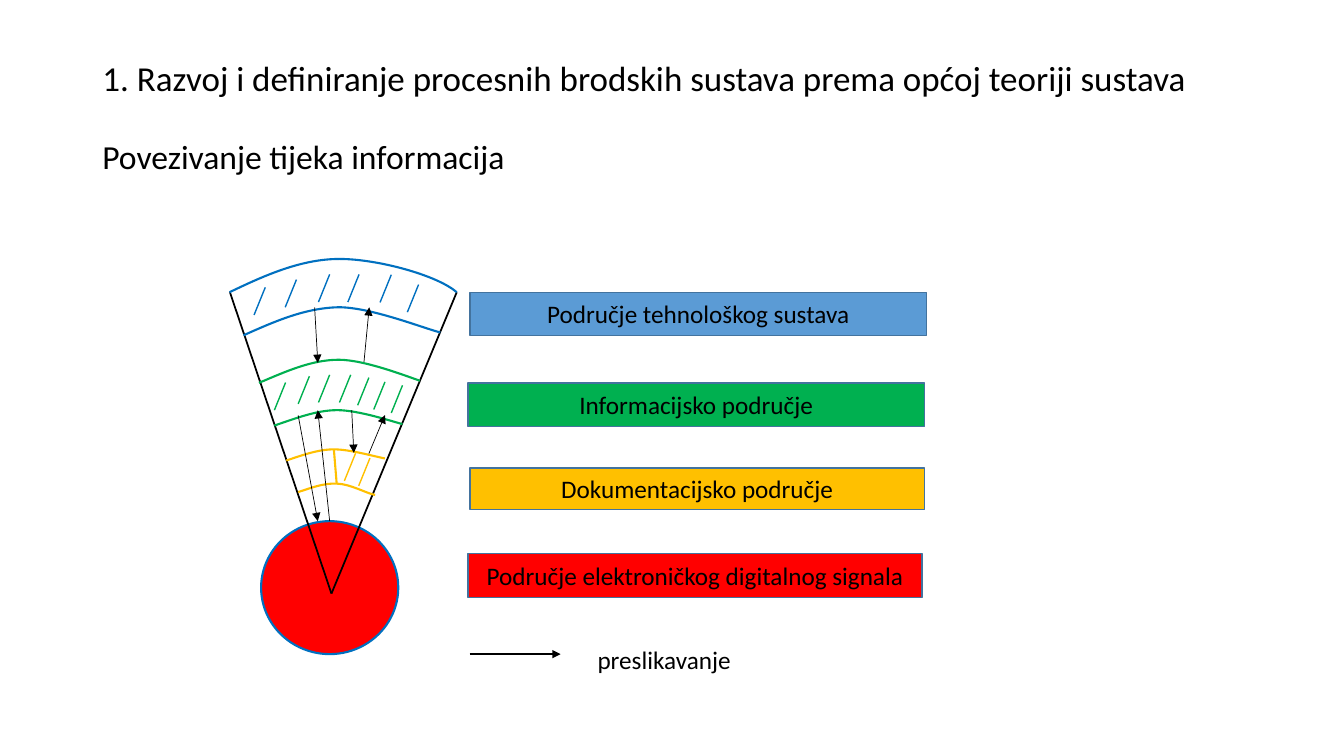
from pptx import Presentation
from pptx import util as u
from pptx.dml import color as c
from pptx.enum import shapes, text
from pptx.oxml import ns
from lxml import etree

BLACK, WHITE, RED = "000000", "FFFFFF", "FF0000"
BLUE, GREEN, YELLOW = "0070C0", "00B050", "FFC000"


def paint(target, value):
    if hasattr(target, "solid"):
        target.solid()
        target = target.fore_color
    target.rgb = c.RGBColor.from_string(value)


def add_line(start, end, colour, width, arrow=False):
    line = slide.shapes.add_connector(
        shapes.MSO_CONNECTOR.STRAIGHT, *(u.Pt(value) for value in (*start, *end))
    )
    paint(line.line.color, colour)
    line.line.width = u.Pt(width)
    outline = line._element.spPr.find(ns.qn("a:ln"))
    if arrow:
        etree.SubElement(outline, ns.qn("a:tailEnd")).set("type", "triangle")
    etree.SubElement(line._element.spPr, ns.qn("a:effectLst"))
    return line


presentation = Presentation()
presentation.slide_width = u.Pt(960)
presentation.slide_height = u.Pt(540)
slide = presentation.slides.add_slide(presentation.slide_layouts[5])

title = slide.shapes.title
title.left, title.top, title.width, title.height = (
    u.Pt(value) for value in (66, 28.75, 828, 57)
)
subtitle = slide.shapes.add_textbox(u.Pt(66), u.Pt(97), u.Pt(828), u.Pt(389.5))
headings = [
    (title, "1. Razvoj i definiranje procesnih brodskih sustava prema općoj teoriji sustava",
     25, text.MSO_ANCHOR.MIDDLE),
    (subtitle, "Povezivanje tijeka informacija", 24, text.MSO_ANCHOR.TOP),
]
for shape, wording, size, anchor in headings:
    frame = shape.text_frame
    frame.text = wording
    frame.word_wrap = True
    frame.auto_size = text.MSO_AUTO_SIZE.NONE
    frame.vertical_anchor = anchor
    paragraph = frame.paragraphs[0]
    paragraph.alignment = text.PP_ALIGN.LEFT
    paragraph.line_spacing = 0.9
    font = paragraph.runs[0].font
    font.name, font.size = "Calibri", u.Pt(size)
    paint(font.color, BLACK)

signal_circle = slide.shapes.add_shape(
    shapes.MSO_SHAPE.OVAL, u.Pt(186.5), u.Pt(372.25), u.Pt(98), u.Pt(95)
)
signal_circle.shadow.inherit = False
paint(signal_circle.fill, RED)
paint(signal_circle.line.color, BLUE)
signal_circle.line.width = u.Pt(1.5)

for corner in [(164.25, 208.75), (326.25, 208.75)]:
    add_line((236.75, 424), corner, BLACK, 1.25)

arcs = [
    (YELLOW, [(213, 351.5), (222.5, 348.5), (231, 345), (240.5, 345.5),
              (250, 345.5), (263, 353), (268, 353.5)]),
    (YELLOW, [(204.5, 329), (215, 325.5), (227, 321), (238.5, 321),
              (250, 321), (267, 326), (275, 327.5)]),
    (GREEN, [(196, 304), (211, 299), (226, 293), (241, 293),
             (256, 293), (280, 301), (287.5, 303)]),
    (GREEN, [(185, 273.5), (204, 265.5), (222.5, 257), (242, 257),
             (260.5, 257), (291, 269), (300, 272)]),
    (BLUE, [(174, 239.5), (196.5, 229.5), (218, 220), (242, 219.5),
            (265, 219.5), (302.5, 234.5), (314.5, 237.5)]),
    (BLUE, [(164, 208.75), (189.5, 196.5), (215.5, 185), (242.5, 185),
            (269.5, 185), (312, 196.5), (326.25, 208.75)]),
]
for colour, controls in arcs:
    points = [(u.Pt(x), u.Pt(y)) for x, y in controls]
    builder = slide.shapes.build_freeform(*points[0])
    builder.add_line_segments(points[1:], close=False)
    arc = builder.convert_to_shape()
    segments = list(arc._element.iter(ns.qn("a:lnTo")))
    outline = segments[0].getparent()
    for first in (0, 3):
        bezier = etree.SubElement(outline, ns.qn("a:cubicBezTo"))
        for segment in segments[first:first + 3]:
            bezier.append(segment[0])
            outline.remove(segment)
    arc.shadow.inherit = False
    arc.fill.background()
    paint(arc.line.color, colour)
    arc.line.width = u.Pt(1.5)
paint(arc.fill, WHITE)

mappings = [
    ((224.75, 219.5), (227, 259.25)),
    ((260, 258.5), (263.75, 219.5)),
    ((251.25, 293), (252.75, 323.5)),
    ((263.5, 324), (275, 296.5)),
    ((213, 296.75), (227, 372.25)),
]
for start, end in mappings:
    add_line(start, end, BLACK, 0.5, arrow=True)
signal_arrow = add_line((235.5, 372.25), (227, 293), BLACK, 0.5, arrow=True)
signal_arrow.begin_connect(signal_circle, 0)
add_line((240.5, 345.5), (238.5, 321), YELLOW, 1.5)

areas = [
    ("Područje tehnološkog sustava", "5B9BD5", 335.75, 208.75, 326, 31),
    ("Informacijsko područje", GREEN, 334.25, 273.5, 326, 31),
    ("Dokumentacijsko područje", YELLOW, 335.75, 334.25, 324.5, 29.5),
    ("Područje elektroničkog digitalnog signala", RED, 334.25, 395.5, 324.5, 31.5),
    ("preslikavanje", None, 416, 454.5, 116.75, 32.5),
]
for wording, colour, *place in areas:
    box = [u.Pt(value) for value in place]
    if colour:
        shape = slide.shapes.add_shape(shapes.MSO_SHAPE.RECTANGLE, *box)
        shape.shadow.inherit = False
        paint(shape.fill, colour)
        paint(shape.line.color, "43739E")
        shape.line.width = u.Pt(1)
    else:
        shape = slide.shapes.add_textbox(*box)
    frame = shape.text_frame
    frame.text = wording
    frame.word_wrap = True
    frame.vertical_anchor = text.MSO_ANCHOR.MIDDLE
    paragraph = frame.paragraphs[0]
    paragraph.alignment = text.PP_ALIGN.CENTER
    font = paragraph.runs[0].font
    font.name, font.size = "Calibri", u.Pt(18)
    paint(font.color, BLACK)

add_line((335.5, 467.25), (400.5, 467.25), BLACK, 1.5, arrow=True)

hatching = [
    (GREEN, [(196, 293), (213, 288.5), (227.5, 287.5), (242.5, 287.5),
             (255.5, 289.5), (267, 292.5), (279.5, 295)]),
    (YELLOW, [(246, 343.5), (256.25, 347)]),
    (BLUE, [(181.5, 225), (203.75, 219.5), (227.5, 215.75), (248.5, 215.75),
            (271.5, 216), (291, 223)]),
]
for colour, starts in hatching:
    for x, y in starts:
        add_line((x, y), (x + 8, y - 19.75), colour, 1)

presentation.save("out.pptx")
